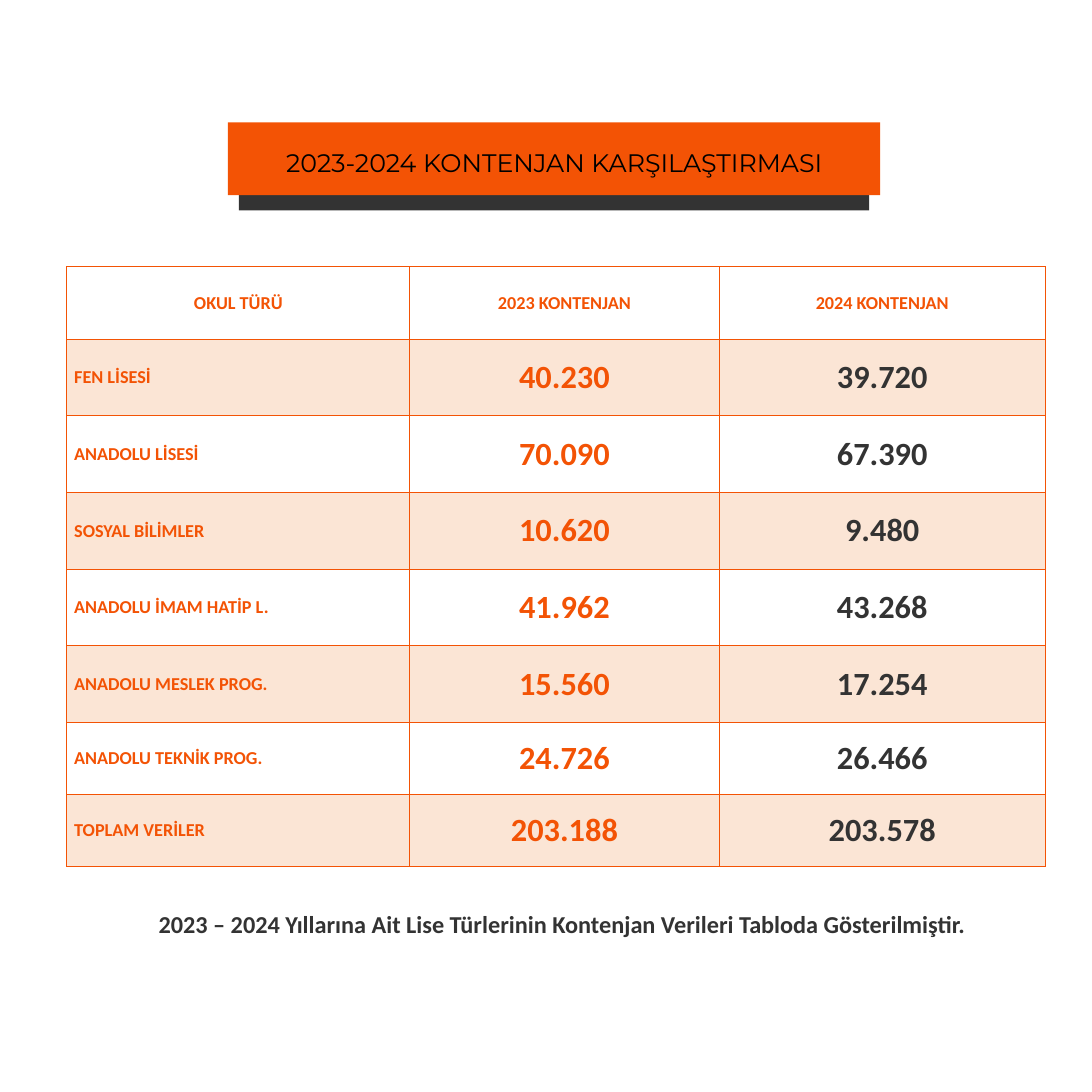
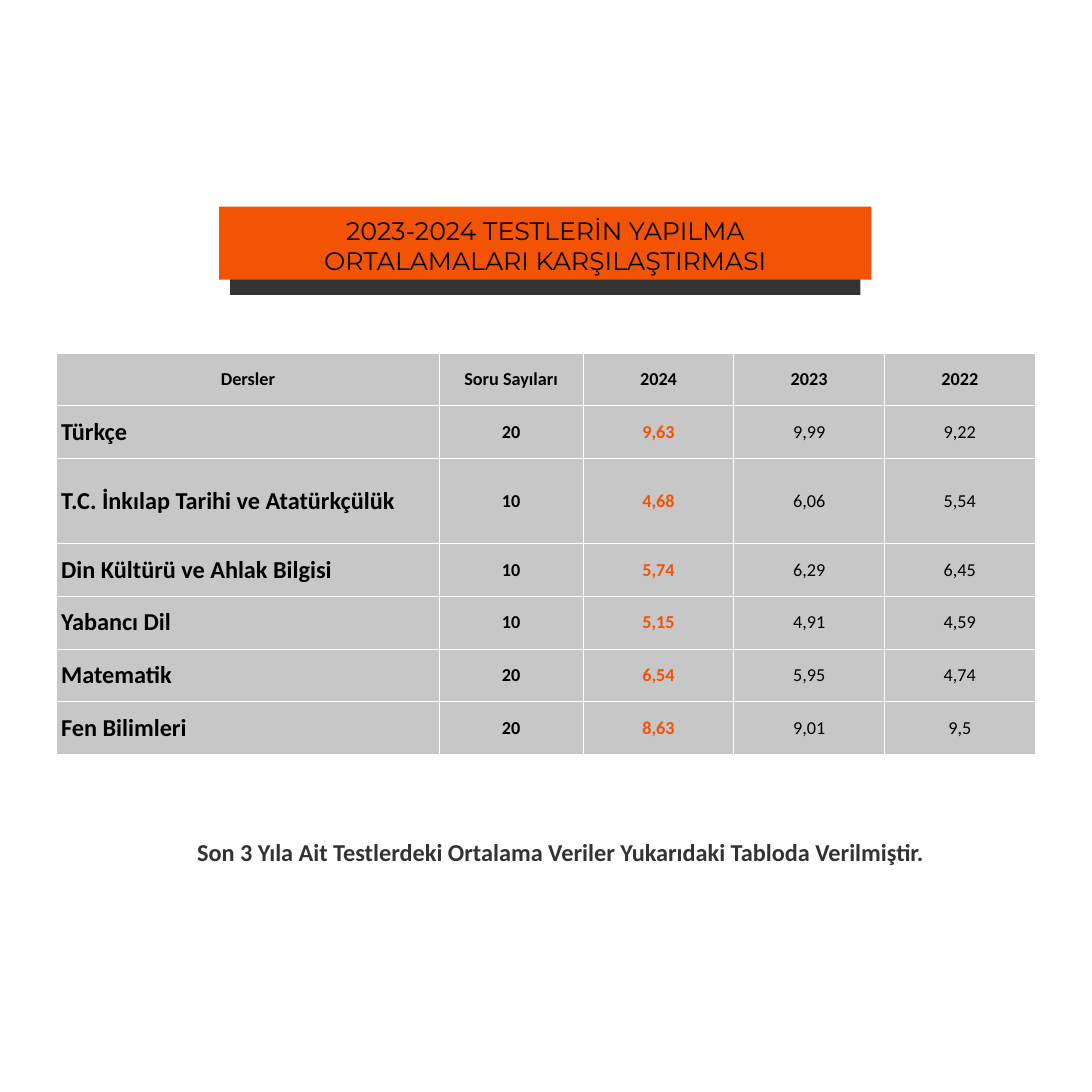
from lxml.etree import SubElement
from pptx import Presentation
from pptx.dml.color import RGBColor
from pptx.enum.shapes import MSO_SHAPE
from pptx.enum.text import MSO_ANCHOR, PP_ALIGN
from pptx.oxml import parse_xml
from pptx.oxml.ns import nsdecls, qn
from pptx.util import Pt

COLORS = {
    "orange": "F35305",
    "dark": "333333",
    "black": "000000",
    "white": "FFFFFF",
    "band": "ED7D31",
    "grey": "C7C7C7",
}

# Content: places and lengths in points
QUOTAS = {
    "title": ["2023-2024 KONTENJAN KARŞILAŞTIRMASI"],
    "banner_at": (225.4, 121),
    "title_top": 141.8,
    "table_at": (66.2, 263.5),
    "columns": [339.1, 306, 322.6],
    "rows": [72] + [75.8] * 5 + [71.4] * 2,
    "border": "orange",
    "inset": None,
    "cells": [
        ("OKUL TÜRÜ", "2023 KONTENJAN", "2024 KONTENJAN"),
        ("FEN LİSESİ", "40.230", "39.720"),
        ("ANADOLU LİSESİ", "70.090", "67.390"),
        ("SOSYAL BİLİMLER", "10.620", "9.480"),
        ("ANADOLU İMAM HATİP L.", "41.962", "43.268"),
        ("ANADOLU MESLEK PROG.", "15.560", "17.254"),
        ("ANADOLU TEKNİK PROG.", "24.726", "26.466"),
        ("TOPLAM VERİLER", "203.188", "203.578"),
    ],
    "header_format": dict(color="orange", bold=True),
    "column_formats": [
        dict(color="orange", bold=True, align=PP_ALIGN.LEFT),
        dict(size=32, color="orange", bold=True),
        dict(size=32, color="dark", bold=True),
    ],
    "row_fills": [None, ("band", 20)],
    "caption": "2023 – 2024 Yıllarına Ait Lise Türlerinin Kontenjan Verileri "
               "Tabloda Gösterilmiştir.",
    "caption_at": (109.4, 895.7),
}

AVERAGES = {
    "title": ["2023-2024 TESTLERİN YAPILMA", "ORTALAMALARI KARŞILAŞTIRMASI"],
    "banner_at": (216.7, 204.5),
    "title_top": 209.5,
    "table_at": (56.2, 349.2),
    "columns": [378, 142.6] + [149] * 3,
    "rows": [52.2, 52.2, 84] + [52.2] * 4,
    "border": "white",
    "inset": 4.3,
    "cells": [
        ("Dersler", "Soru Sayıları", "2024", "2023", "2022"),
        ("Türkçe", "20", "9,63", "9,99", "9,22"),
        ("T.C. İnkılap Tarihi ve Atatürkçülük", "10", "4,68", "6,06", "5,54"),
        ("Din Kültürü ve Ahlak Bilgisi", "10", "5,74", "6,29", "6,45"),
        ("Yabancı Dil", "10", "5,15", "4,91", "4,59"),
        ("Matematik", "20", "6,54", "5,95", "4,74"),
        ("Fen Bilimleri", "20", "8,63", "9,01", "9,5"),
    ],
    "header_format": dict(bold=True),
    "column_formats": [
        dict(size=24, bold=True, align=PP_ALIGN.LEFT),
        dict(bold=True),
        dict(color="orange", bold=True),
        {},
        {},
    ],
    "row_fills": [("grey", 100)],
    "caption": "Son 3 Yıla Ait Testlerdeki Ortalama Veriler Yukarıdaki "
               "Tabloda Verilmiştir.",
    "caption_at": (108, 824.4),
}

# Shared banner and caption sizes
BANNER_SIZE = (645.1, 72)
SHADE_OFFSET = (10.8, 32.4)
SHADE_SIZE = (623.5, 54.7)
TITLE_WIDTH = 782
LINE_HEIGHT = 30.5
CAPTION_SIZE = (892.8, 36)


def write_text(frame, lines, size=18, font="Calibri", color="black",
               bold=False, align=PP_ALIGN.CENTER):
    frame.word_wrap = True
    for number, line in enumerate(lines):
        paragraph = frame.add_paragraph() if number else frame.paragraphs[0]
        paragraph.alignment = align
        run = paragraph.add_run()
        run.text = line
        run.font.size = Pt(size)
        run.font.name = font
        run.font.bold = bold
        run.font.color.rgb = RGBColor.from_string(COLORS[color])


def add_text(slide, left, top, width, height, lines, **text_format):
    box = slide.shapes.add_textbox(Pt(left), Pt(top), Pt(width), Pt(height))
    write_text(box.text_frame, lines, **text_format)


def add_bar(slide, left, top, width, height, color):
    bar = slide.shapes.add_shape(
        MSO_SHAPE.RECTANGLE, Pt(left), Pt(top), Pt(width), Pt(height))
    bar.shadow.inherit = False
    bar.fill.solid()
    bar.fill.fore_color.rgb = RGBColor.from_string(COLORS[color])
    bar.line.fill.background()


def add_banner(slide, content):
    left, top = content["banner_at"]
    width, height = BANNER_SIZE
    add_bar(slide, left + SHADE_OFFSET[0], top + SHADE_OFFSET[1],
            *SHADE_SIZE, "dark")
    add_bar(slide, left, top, width, height, "orange")
    title_left = left + (width - TITLE_WIDTH) / 2
    title_height = LINE_HEIGHT * len(content["title"]) + 7.2
    add_text(slide, title_left, content["title_top"], TITLE_WIDTH,
             title_height, content["title"], size=25, font="Montserrat")


def fill_cell(cell, fill):
    if fill is None:
        cell.fill.background()
        return
    color, opacity = fill
    cell.fill.solid()
    cell.fill.fore_color.rgb = RGBColor.from_string(COLORS[color])
    if opacity < 100:
        tint = next(cell._tc.tcPr.iter(qn("a:srgbClr")))
        SubElement(tint, qn("a:alpha")).set("val", str(opacity * 1000))


def border_cell(cell, color):
    # Borders come before the fill in the cell properties
    for place, side in enumerate(("lnL", "lnR", "lnT", "lnB")):
        cell._tc.get_or_add_tcPr().insert(place, parse_xml(
            f'<a:{side} {nsdecls("a")} w="{Pt(1)}"><a:solidFill>'
            f'<a:srgbClr val="{COLORS[color]}"/></a:solidFill></a:{side}>'))


def add_data_table(slide, content):
    columns, rows = content["columns"], content["rows"]
    left, top = content["table_at"]
    table = slide.shapes.add_table(
        len(rows), len(columns), Pt(left), Pt(top),
        Pt(sum(columns)), Pt(sum(rows))).table
    table.first_row = table.horz_banding = False
    for column, width in zip(table.columns, columns):
        column.width = Pt(width)
    fills = content["row_fills"]
    for r, (height, texts) in enumerate(zip(rows, content["cells"])):
        table.rows[r].height = Pt(height)
        for c, text in enumerate(texts):
            cell = table.cell(r, c)
            cell.vertical_anchor = MSO_ANCHOR.MIDDLE
            if content["inset"] is not None:
                cell.margin_left = cell.margin_right = Pt(content["inset"])
                cell.margin_top = cell.margin_bottom = Pt(content["inset"])
            text_format = content["column_formats"][c] if r else content["header_format"]
            write_text(cell.text_frame, [text], **text_format)
            fill_cell(cell, fills[r % len(fills)])
            border_cell(cell, content["border"])


def main():
    deck = Presentation()
    deck.slide_width = deck.slide_height = Pt(1080)
    for content in (QUOTAS, AVERAGES):
        slide = deck.slides.add_slide(deck.slide_layouts[6])
        add_banner(slide, content)
        add_data_table(slide, content)
        add_text(slide, *content["caption_at"], *CAPTION_SIZE,
                 [content["caption"]], size=24, color="dark", bold=True)
    deck.save("out.pptx")


if __name__ == "__main__":
    main()
